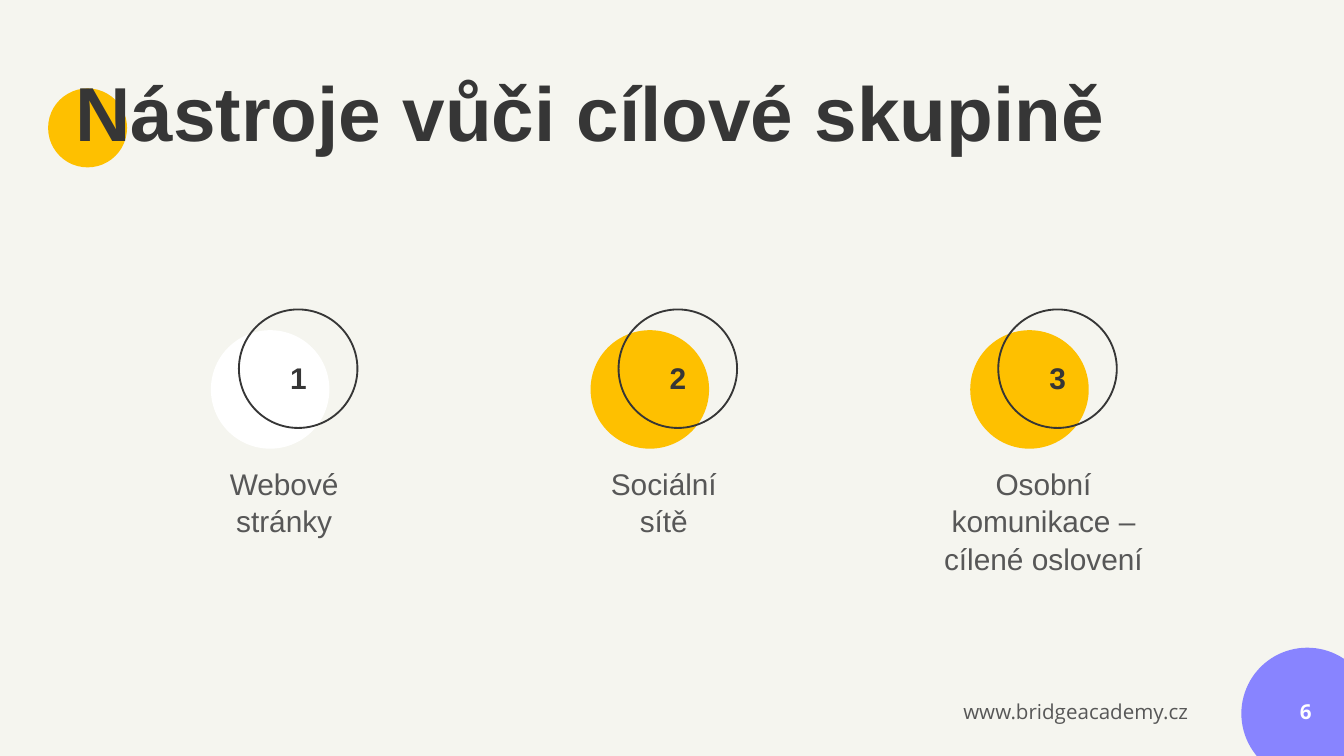
from pptx import Presentation
from pptx.dml.color import RGBColor
from pptx.enum.shapes import MSO_SHAPE
from pptx.enum.text import MSO_ANCHOR, PP_ALIGN
from pptx.util import Pt

OVAL = MSO_SHAPE.OVAL
LEFT, CENTER, RIGHT = PP_ALIGN.LEFT, PP_ALIGN.CENTER, PP_ALIGN.RIGHT
TOP, MIDDLE = MSO_ANCHOR.TOP, MSO_ANCHOR.MIDDLE

COLORS = {
    "background": "F5F5EF",
    "yellow": "FEC000",
    "violet": "8884FF",
    "white": "FFFFFF",
    "dark": "363636",
    "gray": "575757",
}

TITLE = "Nástroje vůči cílové skupině"
WEBSITE = "www.bridgeacademy.cz"
PAGE = "6"
TOOLS = [
    (["Webové", "stránky"], "white", 78.5),
    (["Sociální", "sítě"], "yellow", 78.5),
    (["Osobní komunikace – cílené oslovení"], "yellow", 134.6),
]

FIRST_X, PITCH = 113, 203.4
DISC, DISC_Y = 63.5, 176.9
RING_DX, RING_Y = 15, 165.8
CAPTION_Y, CAPTION_H = 248.4, 63.4


def rgb(name):
    return RGBColor.from_string(COLORS[name])


def add_circle(shapes, x, y, size, fill=None, line=None):
    s = shapes.add_shape(OVAL, Pt(x), Pt(y), Pt(size), Pt(size))
    s.shadow.inherit = False
    if fill:
        s.fill.solid()
        s.fill.fore_color.rgb = rgb(fill)
    else:
        s.fill.background()
    if line:
        s.line.color.rgb = rgb(line)
        s.line.width = Pt(1)
    else:
        s.line.fill.background()


def add_text(shapes, box, lines, size, color, font="Arial", bold=False,
             align=LEFT, anchor=TOP, spacing=1.0, inset=(0, 0)):
    tf = shapes.add_textbox(*map(Pt, box)).text_frame
    tf.word_wrap = True
    tf.vertical_anchor = anchor
    tf.margin_left = tf.margin_right = Pt(inset[0])
    tf.margin_top = tf.margin_bottom = Pt(inset[1])
    for i, line in enumerate(lines):
        p = tf.add_paragraph() if i else tf.paragraphs[0]
        p.alignment = align
        p.line_spacing = spacing
        r = p.add_run()
        r.text = line
        r.font.name = font
        r.font.size = Pt(size)
        r.font.bold = bold
        r.font.color.rgb = rgb(color)


prs = Presentation()
prs.slide_width, prs.slide_height = Pt(720), Pt(405)
slide = prs.slides.add_slide(prs.slide_layouts[6])
slide.background.fill.solid()
slide.background.fill.fore_color.rgb = rgb("background")
shapes = slide.shapes

add_circle(shapes, 25.8, 47.4, 42.3, "yellow")
add_circle(shapes, 665, 347, 70.6, "violet")
add_text(shapes, (509, 370.8, 167.8, 33.1), [WEBSITE], 11, "gray",
         font="Open Sans", inset=(7.2, 3.6))
add_text(shapes, (40.3, 40.3, 574.6, 56.2), [TITLE], 41, "dark",
         bold=True, spacing=0.9)
add_text(shapes, (659.5, 373.7, 43.2, 14.4), [PAGE], 11, "white",
         font="Open Sans", bold=True, align=RIGHT, anchor=MIDDLE)

for i, (caption, fill, width) in enumerate(TOOLS):
    x = FIRST_X + i * PITCH
    center = x + (RING_DX + DISC) / 2
    add_text(shapes, (center - width / 2, CAPTION_Y, width, CAPTION_H),
             caption, 16, "gray", align=CENTER, spacing=1.05)
    badge = shapes.add_group_shape().shapes
    add_circle(badge, x, DISC_Y, DISC, fill)
    add_circle(badge, x + RING_DX, RING_Y, DISC, line="dark")
    add_text(badge, (x + 31.7, 187.9, 30.2, 23.8), [str(i + 1)], 16, "dark",
             bold=True, align=CENTER, spacing=1.24)

prs.save("out.pptx")
